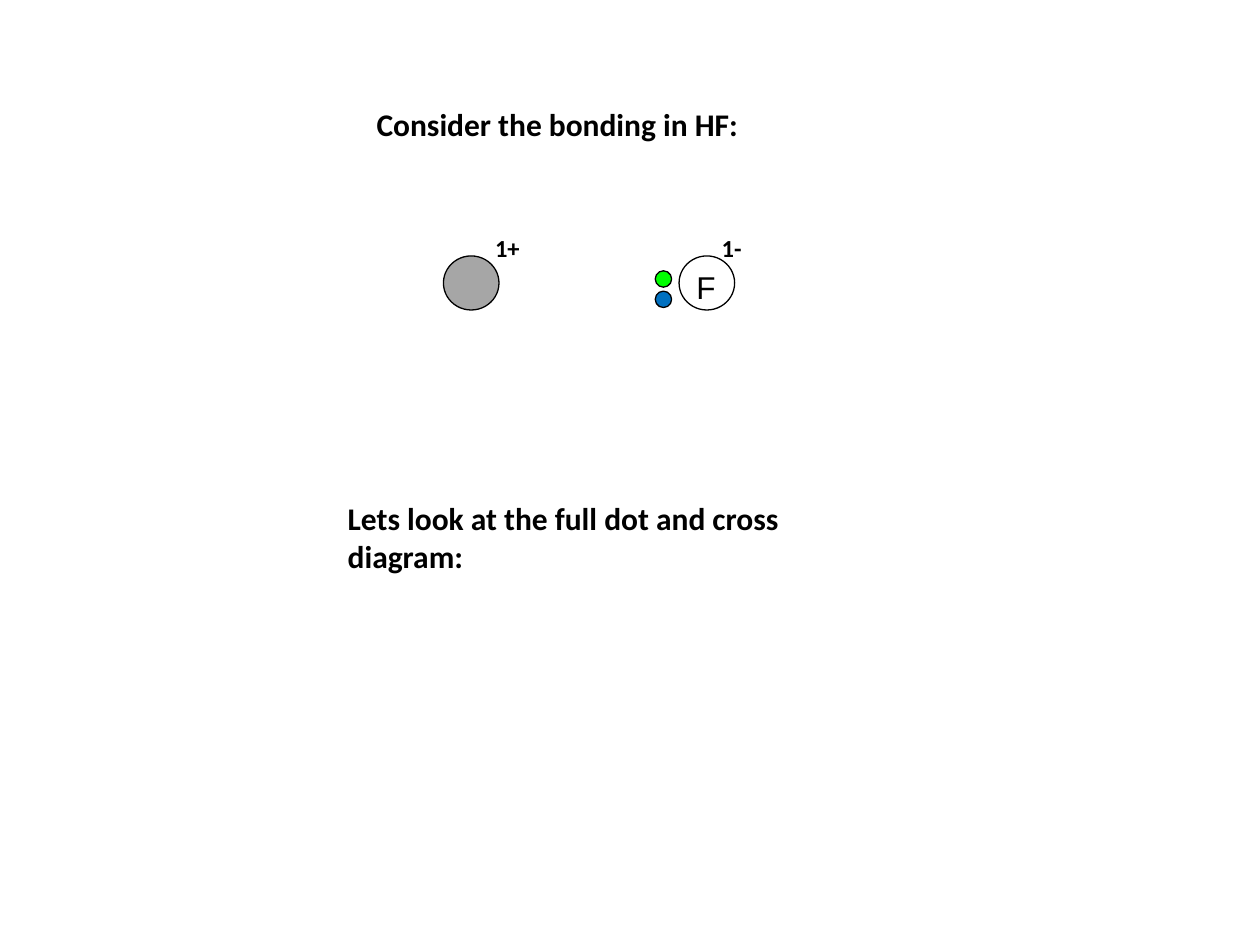
from dataclasses import dataclass

from pptx import Presentation
from pptx.dml.color import RGBColor
from pptx.enum.shapes import MSO_SHAPE
from pptx.enum.text import MSO_ANCHOR, MSO_AUTO_SIZE, PP_ALIGN
from pptx.util import Cm, Pt

OVAL = MSO_SHAPE.OVAL
TOP = MSO_ANCHOR.TOP
LEFT = PP_ALIGN.LEFT
GROW = MSO_AUTO_SIZE.SHAPE_TO_FIT_TEXT
FIXED = MSO_AUTO_SIZE.NONE
TITLE_ONLY = 5


@dataclass(frozen=True)
class Theme:
    ink: str = "000000"
    hydrogen: str = "A6A6A6"
    hydrogen_electron: str = "00FF00"
    fluorine_electron: str = "0070C0"
    text_font: str = "Calibri"
    symbol_font: str = "Arial"
    text_size: float = 18
    charge_size: float = 14
    outline: float = 0.75


def write(shape, text, *, font, size, color, bold=True, auto_size=GROW,
          insets=(0.25, 0.13)):
    """Put one left-aligned, formatted line of text into a shape."""
    frame = shape.text_frame
    frame.word_wrap = True
    frame.auto_size = auto_size
    frame.vertical_anchor = TOP
    frame.margin_left = frame.margin_right = Cm(insets[0])
    frame.margin_top = frame.margin_bottom = Cm(insets[1])
    paragraph = frame.paragraphs[0]
    paragraph.alignment = LEFT
    run = paragraph.add_run()
    run.text = text
    run.font.name = font
    run.font.size = Pt(size)
    run.font.bold = bold
    run.font.color.rgb = RGBColor.from_string(color)


class BondingSlide:
    def __init__(self, slide, theme):
        self.slide = slide
        self.theme = theme

    def text_format(self, **changes):
        return {"font": self.theme.text_font, "size": self.theme.text_size,
                "color": self.theme.ink, **changes}

    def title(self, text, left, top, width, height):
        heading = self.slide.shapes.title
        heading.left, heading.top = Cm(left), Cm(top)
        heading.width, heading.height = Cm(width), Cm(height)
        write(heading, text, **self.text_format())

    def label(self, text, left, top, width, height, **changes):
        box = self.slide.shapes.add_textbox(
            Cm(left), Cm(top), Cm(width), Cm(height))
        write(box, text, **self.text_format(**changes))

    def circle(self, left, top, width, height, fill=None):
        disc = self.slide.shapes.add_shape(
            OVAL, Cm(left), Cm(top), Cm(width), Cm(height))
        disc.shadow.inherit = False
        if fill:
            disc.fill.solid()
            disc.fill.fore_color.rgb = RGBColor.from_string(fill)
        else:
            disc.fill.background()
        disc.line.color.rgb = RGBColor.from_string(self.theme.ink)
        disc.line.width = Pt(self.theme.outline)


def main():
    deck = Presentation()
    deck.slide_width, deck.slide_height = Cm(25.4), Cm(19.05)
    theme = Theme()
    page = BondingSlide(
        deck.slides.add_slide(deck.slide_layouts[TITLE_ONLY]), theme)

    # Heading and prompt
    page.title("Consider the bonding in HF:", 7.34, 1.98, 9.73, 1.02)
    page.label("Lets look at the full dot and cross diagram:",
               6.76, 9.93, 10.72, 1.8)

    # Shared electron pair
    electron_colors = (theme.hydrogen_electron, theme.fluorine_electron)
    for row, color in enumerate(electron_colors):
        page.circle(13.21, 5.46 + 0.41 * row, 0.33, 0.33, color)

    # Hydrogen and fluorine
    atom_top, atom_width, atom_height = 5.16, 1.12, 1.09
    page.circle(8.94, atom_top, atom_width, atom_height, theme.hydrogen)
    page.label("F", 13.84, 5.31, 1.02, 0.48, font=theme.symbol_font,
               bold=False, auto_size=FIXED, insets=(0.2, 0.1))
    page.circle(13.69, atom_top, atom_width, atom_height)

    # Charges
    for charge, left in (("1+", 9.73), ("1-", 14.3)):
        page.label(charge, left, 4.57, 1.78, 0.86, size=theme.charge_size)

    deck.save("out.pptx")


if __name__ == "__main__":
    main()
